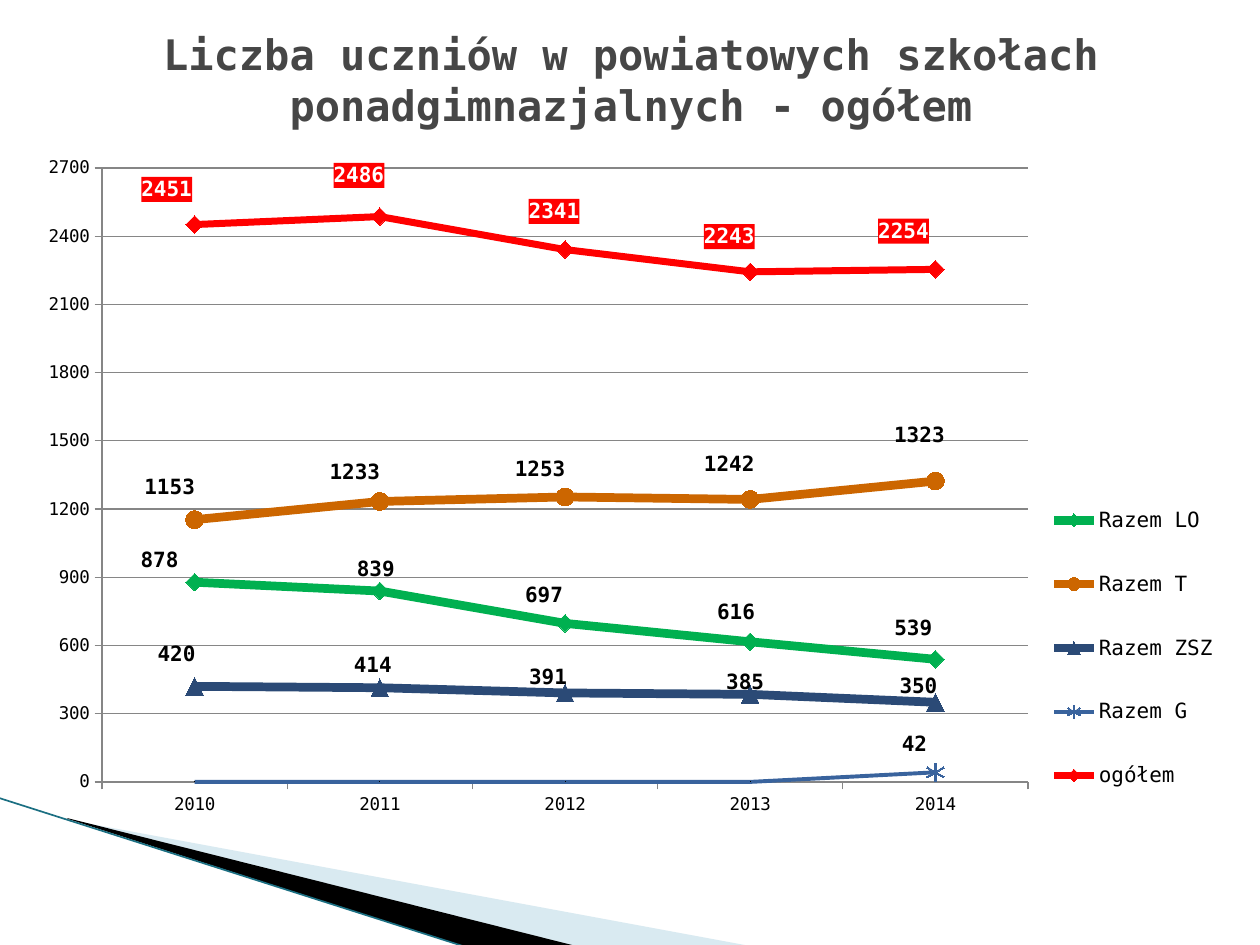
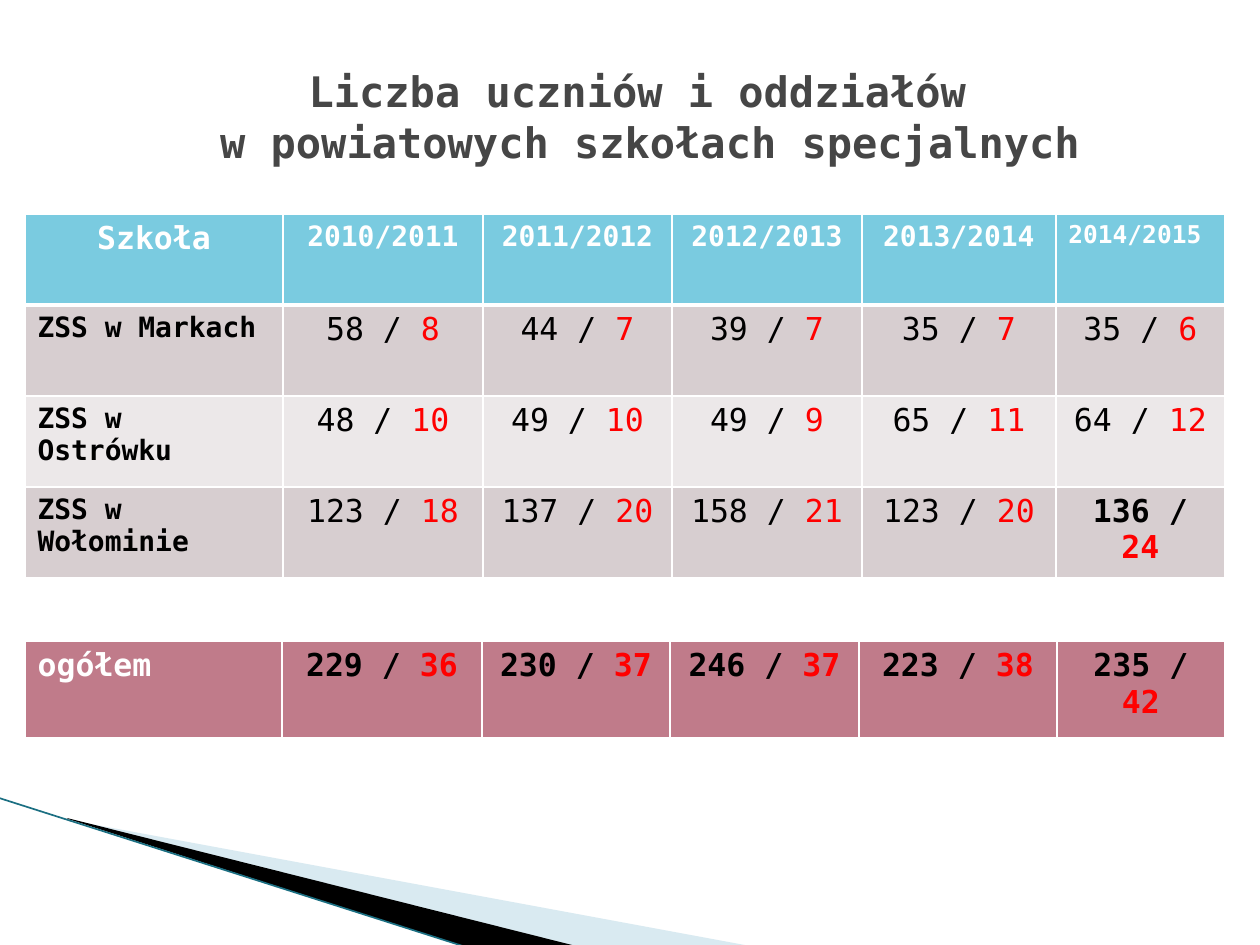
from lxml import etree
from pptx import Presentation
from pptx.chart.data import CategoryChartData
from pptx.dml.color import RGBColor
from pptx.enum.chart import XL_CHART_TYPE, XL_LABEL_POSITION, XL_LEGEND_POSITION, XL_MARKER_STYLE, XL_TICK_MARK
from pptx.enum.shapes import MSO_CONNECTOR
from pptx.enum.text import MSO_ANCHOR, PP_ALIGN
from pptx.oxml import parse_xml
from pptx.oxml.ns import nsdecls, qn
from pptx.util import Emu, Pt

PX = 914400 / 126
FONT = "DejaVu Sans Mono"
LEFT, CENTER = PP_ALIGN.LEFT, PP_ALIGN.CENTER
MIDDLE = MSO_ANCHOR.MIDDLE
ABOVE = XL_LABEL_POSITION.ABOVE
OUTSIDE = XL_TICK_MARK.OUTSIDE
RIGHT = XL_LEGEND_POSITION.RIGHT
LINE_MARKERS = XL_CHART_TYPE.LINE_MARKERS
STRAIGHT = MSO_CONNECTOR.STRAIGHT
DIAMOND, CIRCLE = XL_MARKER_STYLE.DIAMOND, XL_MARKER_STYLE.CIRCLE
TRIANGLE, STAR = XL_MARKER_STYLE.TRIANGLE, XL_MARKER_STYLE.STAR
NO_MARKER = XL_MARKER_STYLE.NONE

WHITE = RGBColor(0xFF, 0xFF, 0xFF)
BLACK = RGBColor(0, 0, 0)
RED = RGBColor(0xFF, 0, 0)
TITLE_GRAY = RGBColor(0x46, 0x46, 0x46)
GRID_GRAY = RGBColor(0x86, 0x86, 0x86)
PALE_BLUE = RGBColor(0xA0, 0xCB, 0xDC)
TEAL = RGBColor(0x1B, 0x6F, 0x82)
GREEN = RGBColor(0, 0xB0, 0x50)
ORANGE = RGBColor(0xCC, 0x66, 0)
NAVY = RGBColor(0x2B, 0x4A, 0x76)
BLUE = RGBColor(0x39, 0x63, 0x9D)
HEADER_BLUE = RGBColor(0x7A, 0xCB, 0xE0)
ROW_DARK = RGBColor(0xD7, 0xCE, 0xD0)
ROW_LIGHT = RGBColor(0xEC, 0xE8, 0xE9)
TOTAL_ROSE = RGBColor(0xC0, 0x7B, 0x8A)

CHART_BOX = (25, 145, 1211, 683)
PLOT_BOX = (102, 168, 926, 614)
LEGEND_BOX = (1051, 469, 165, 358)
LABEL_RISE = 26
YEARS = ["2010", "2011", "2012", "2013", "2014"]
SERIES = [
    ("Razem LO", [878, 839, 697, 616, 539], GREEN, 5, DIAMOND,
     [(-35, -22), (-4, -22), (-21, -28), (-14, -29), (-22, -31)]),
    ("Razem T", [1153, 1233, 1253, 1242, 1323], ORANGE, 5, CIRCLE,
     [(-25, -32), (-25, -29), (-25, -28), (-21, -35), (-16, -46)]),
    ("Razem ZSZ", [420, 414, 391, 385, 350], NAVY, 5, TRIANGLE,
     [(-18, -32), (-7, -22), (-17, -15), (-5, -12), (-17, -16)]),
    ("Razem G", [0, 0, 0, 0, 42], BLUE, 2.25, STAR,
     [None, None, None, None, (-21, -28)]),
    ("ogółem", [2451, 2486, 2341, 2243, 2254], RED, 4, DIAMOND,
     [(-28, -35), (-21, -41), (-11, -38), (-21, -35), (-32, -38)]),
]

SCHOOL_YEARS = ["2010/2011", "2011/2012", "2012/2013", "2013/2014", "2014/2015"]
SCHOOLS = [
    ("ZSS w Markach", [(58, 8), (44, 7), (39, 7), (35, 7), (35, 6)]),
    ("ZSS w Ostrówku", [(48, 10), (49, 10), (49, 9), (65, 11), (64, 12)]),
    ("ZSS w Wołominie", [(123, 18), (137, 20), (158, 21), (123, 20), (136, 24)]),
]
TOTALS = [(229, 36), (230, 37), (246, 37), (223, 38), (235, 42)]


def px(*lengths):
    return [Emu(round(length * PX)) for length in lengths]


def set_font(font, size, color, bold=False):
    font.name = FONT
    font.size = Pt(size)
    font.bold = bold
    font.color.rgb = color


def write(para, text, size=18, color=BLACK, bold=False, align=CENTER):
    para.alignment = align
    for number, line in enumerate(text.split("\n")):
        if number:
            para.add_line_break()
        span = para.add_run()
        span.text = line
        set_font(span.font, size, color, bold)


def add_title(page, text, left, top, width, height):
    box = page.shapes.add_textbox(*px(left, top, width, height))
    frame = box.text_frame
    frame.word_wrap = True
    frame.vertical_anchor = MIDDLE
    write(frame.paragraphs[0], text, size=24, color=TITLE_GRAY, bold=True)


def add_wedge(page, points, color, opacity=100):
    builder = page.shapes.build_freeform(*points[0], scale=PX)
    builder.add_line_segments(points[1:])
    wedge = builder.convert_to_shape()
    wedge.shadow.inherit = False
    wedge.fill.solid()
    wedge.fill.fore_color.rgb = color
    wedge.line.fill.background()
    if opacity < 100:
        tint = wedge.element.spPr.find(".//" + qn("a:srgbClr"))
        etree.SubElement(tint, qn("a:alpha"), val=str(opacity * 1000))


def add_page(deck):
    page = deck.slides.add_slide(deck.slide_layouts[6])
    add_wedge(page, [(69, 820), (750, 946), (575, 946), (69, 819)], PALE_BLUE, opacity=40)
    add_wedge(page, [(67, 818), (576, 946), (469, 948), (68, 819)], BLACK)
    edge = page.shapes.add_connector(STRAIGHT, *px(-1, 798, 469, 948))
    edge.line.color.rgb = TEAL
    edge.line.width = Pt(0.95)
    etree.SubElement(edge.element.spPr, qn("a:effectLst"))
    return page


def set_layout(parent, position, **values):
    for layout in parent.findall(qn("c:layout")):
        parent.remove(layout)
    layout = etree.Element(qn("c:layout"))
    manual = etree.SubElement(layout, qn("c:manualLayout"))
    for tag, value in values.items():
        etree.SubElement(manual, qn("c:" + tag), val=str(value))
    parent.insert(position, layout)


def chart_area(left, top, width, height):
    chart_left, chart_top, chart_width, chart_height = CHART_BOX
    return {
        "xMode": "edge", "yMode": "edge",
        "x": round((left - chart_left) / chart_width, 4),
        "y": round((top - chart_top) / chart_height, 4),
        "w": round(width / chart_width, 4),
        "h": round(height / chart_height, 4),
    }


def fill_label(node, color):
    for properties in node.findall(qn("c:spPr")):
        node.remove(properties)
    node.find(qn("c:txPr")).addprevious(parse_xml(
        f'<c:spPr {nsdecls("c", "a")}><a:solidFill>'
        f'<a:srgbClr val="{color}"/></a:solidFill></c:spPr>'))


def label_point(series, index, shift, color=BLACK, fill=None):
    label = series.points[index].data_label
    set_font(label.font, 12, color, bold=True)
    label.position = ABOVE
    node = series.data_labels._element.xpath(f"c:dLbl[c:idx/@val='{index}']")[0]
    set_layout(node, 1, x=round(shift[0] / CHART_BOX[2], 4),
               y=round((shift[1] + LABEL_RISE) / CHART_BOX[3], 4))
    if fill:
        fill_label(node, fill)


def style_series(series, color, width, marker, shifts):
    series.smooth = False
    series.format.line.color.rgb = color
    series.format.line.width = Pt(width)
    series.marker.style = marker
    series.marker.size = 10
    series.marker.format.fill.solid()
    series.marker.format.fill.fore_color.rgb = color
    series.marker.format.line.color.rgb = color
    labels = series.data_labels
    labels.show_value = False
    label_format = {}
    if color == RED:
        label_format = {"color": WHITE, "fill": RED}
        set_font(labels.font, 12, WHITE, bold=True)
        fill_label(labels._element, RED)
    for index, shift in enumerate(shifts):
        if shift:
            label_point(series, index, shift, **label_format)
        else:
            series.points[index].marker.style = NO_MARKER


def style_axis(axis):
    axis.major_tick_mark = OUTSIDE
    axis.format.line.color.rgb = GRID_GRAY
    set_font(axis.tick_labels.font, 10, BLACK)


def add_student_chart(page):
    data = CategoryChartData()
    data.categories = YEARS
    for name, values, *_ in SERIES:
        data.add_series(name, values)
    chart = page.shapes.add_chart(LINE_MARKERS, *px(*CHART_BOX), data).chart
    set_font(chart.font, 10, BLACK)
    chart.has_title = False
    chart.has_legend = True
    chart.legend.position = RIGHT
    chart.legend.include_in_layout = False
    set_font(chart.legend.font, 12, BLACK)
    style_axis(chart.category_axis)
    axis = chart.value_axis
    style_axis(axis)
    axis.minimum_scale, axis.maximum_scale, axis.major_unit = 0, 2700, 300
    axis.has_major_gridlines = True
    axis.major_gridlines.format.line.color.rgb = GRID_GRAY
    plot = chart.plots[0]
    plot.vary_by_categories = False
    for series, (_, _, *style) in zip(plot.series, SERIES):
        style_series(series, *style)
    for leader in chart.element.xpath(".//c:showLeaderLines"):
        leader.set("val", "0")
    set_layout(chart.element.xpath(".//c:plotArea")[0], 0,
               layoutTarget="inner", **chart_area(*PLOT_BOX))
    set_layout(chart.element.xpath(".//c:legend")[0], 1, **chart_area(*LEGEND_BOX))


def style_cell(cell, fill, top=1, bottom=1):
    properties = cell._tc.get_or_add_tcPr()
    for side, width in zip("LRTB", (1, 1, top, bottom)):
        properties.append(parse_xml(
            f'<a:ln{side} {nsdecls("a")} w="{Pt(width)}"><a:solidFill>'
            f'<a:srgbClr val="{WHITE}"/></a:solidFill></a:ln{side}>'))
    cell.fill.solid()
    cell.fill.fore_color.rgb = fill


def add_grid(page, top, column_widths, row_height, fills):
    rows, columns = len(fills), len(column_widths)
    frame = page.shapes.add_table(
        rows, columns, *px(25, top, sum(column_widths), row_height * rows))
    table = frame.table
    table.first_row = table.horz_banding = False
    for column, width in zip(table.columns, px(*column_widths)):
        column.width = width
    for number, fill in enumerate(fills):
        for cell in table.rows[number].cells:
            style_cell(cell, fill, top=3 if number == 1 else 1,
                       bottom=3 if number == 0 else 1)
    return table


def first_para(cell):
    return cell.text_frame.paragraphs[0]


def write_counts(cells, counts, bold_from):
    for number, (cell, (students, classes)) in enumerate(zip(cells, counts)):
        bold = number >= bold_from
        write(first_para(cell), f"{students} / ", bold=bold)
        write(first_para(cell), str(classes), color=RED, bold=bold)


def add_school_table(page):
    table = add_grid(page, 214, [258, 200, 189, 190, 194, 169], 91,
                     [HEADER_BLUE, ROW_DARK, ROW_LIGHT, ROW_DARK])
    header, *body = [list(row.cells) for row in table.rows]
    write(first_para(header[0]), "Szkoła", color=WHITE, bold=True)
    for cell, year in zip(header[1:], SCHOOL_YEARS):
        last = cell is header[-1]
        write(first_para(cell), year, size=14 if last else 16, color=WHITE,
              bold=True, align=LEFT if last else CENTER)
    for cells, (school, counts) in zip(body, SCHOOLS):
        write(first_para(cells[0]), school, size=16, bold=True, align=LEFT)
        write_counts(cells[1:], counts, bold_from=4 if cells is body[-1] else 5)


def add_total_table(page):
    table = add_grid(page, 641, [257, 200, 188, 189, 198, 168], 98, [TOTAL_ROSE])
    cells = list(table.rows[0].cells)
    write(first_para(cells[0]), "ogółem", color=WHITE, bold=True, align=LEFT)
    write_counts(cells[1:], TOTALS, bold_from=0)


def main():
    deck = Presentation()
    deck.slide_width, deck.slide_height = px(1260, 945)

    page = add_page(deck)
    add_title(page, "Liczba uczniów w powiatowych szkołach ponadgimnazjalnych - ogółem",
              64, 0, 1134, 158)
    add_student_chart(page)

    page = add_page(deck)
    add_school_table(page)
    add_title(page, "Liczba uczniów i oddziałów \nw powiatowych szkołach specjalnych",
              144, 37, 1012, 158)
    add_total_table(page)

    deck.save("out.pptx")


if __name__ == "__main__":
    main()
